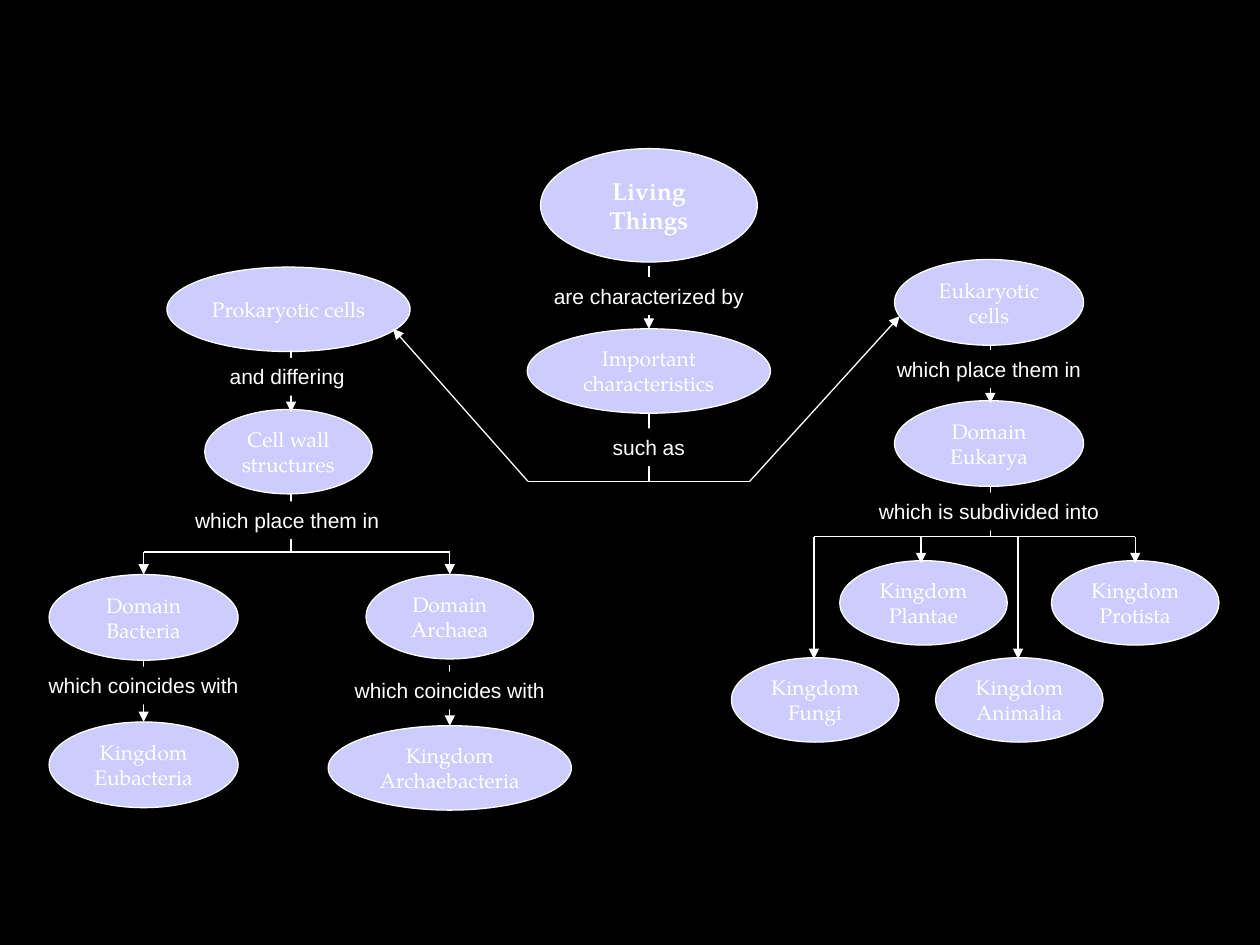
from dataclasses import dataclass

import lxml.etree
import pptx
import pptx.dml.color
import pptx.enum.shapes
import pptx.enum.text
import pptx.oxml.ns
import pptx.util
from pptx.util import Inches


@dataclass(frozen=True)
class Theme:
    background: str = "000000"
    bubble: str = "CCCCFF"
    ink: str = "FFFFFF"
    bubble_font: str = "TeX Gyre Pagella"
    label_font: str = "Arial"
    text_size: float = 12
    root_size: float = 14
    line_width: float = 0.75


@dataclass(frozen=True)
class Bubble:
    text: str
    center: float
    top: float
    size: tuple[float, float]
    is_root: bool = False


@dataclass(frozen=True)
class Label:
    text: str
    center: float
    top: float
    width: float


@dataclass(frozen=True)
class Link:
    start: tuple[float, float]
    end: tuple[float, float]
    arrow: bool = True
    target: str = ""  # text of the bubble whose top the link joins


THEME = Theme()
LABEL_HEIGHT = 0.3
SMALL, MEDIUM, WIDE, ROOT = (1.33, 0.67), (1.5, 0.68), (1.93, 0.67), (1.72, 0.9)

# Columns and horizontal bars of the concept map
BACTERIA_X, ARCHAEA_X, PROKARYOTE_X = 1.14, 3.57, 2.31
ROOT_X, EUKARYOTE_X = 5.15, 7.86
FUNGI_X, PLANTAE_X, ANIMALIA_X, PROTISTA_X = 6.46, 7.31, 8.08, 9.01
CELL_BAR_Y, DOMAIN_BAR_Y, KINGDOM_BAR_Y = 3.82, 4.38, 4.26
CELL_BAR_LEFT, CELL_BAR_RIGHT = 4.19, 5.95

BUBBLES = [
    Bubble("Living Things", ROOT_X, 1.18, ROOT, is_root=True),
    Bubble("Important characteristics", ROOT_X, 2.61, WIDE),
    Bubble("Prokaryotic cells", 2.29, 2.12, WIDE),
    Bubble("Cell wall structures", 2.29, 3.25, SMALL),
    Bubble("Domain Bacteria", BACTERIA_X, 4.56, MEDIUM),
    Bubble("Kingdom Eubacteria", BACTERIA_X, 5.73, MEDIUM),
    Bubble("Domain Archaea", ARCHAEA_X, 4.56, SMALL),
    Bubble("Kingdom Archaebacteria", ARCHAEA_X, 5.76, WIDE),
    Bubble("Eukaryotic cells", 7.85, 2.06, MEDIUM),
    Bubble("Domain Eukarya", 7.85, 3.18, MEDIUM),
    Bubble("Kingdom Plantae", 7.33, 4.45, SMALL),
    Bubble("Kingdom Protista", 9.01, 4.45, SMALL),
    Bubble("Kingdom Fungi", 6.47, 5.22, SMALL),
    Bubble("Kingdom Animalia", 8.09, 5.22, SMALL),
]

# Stems run behind the labels that interrupt them
STEMS = [
    Link((ROOT_X, 2.11), (ROOT_X, 2.61), target="Important characteristics"),
    Link((ROOT_X, 3.28), (ROOT_X, CELL_BAR_Y), arrow=False),
    Link((PROKARYOTE_X, 2.78), (PROKARYOTE_X, 3.27)),
    Link((PROKARYOTE_X, 3.92), (PROKARYOTE_X, DOMAIN_BAR_Y), arrow=False),
    Link((BACTERIA_X, 5.24), (BACTERIA_X, 5.73), target="Kingdom Eubacteria"),
    Link((ARCHAEA_X, 5.28), (ARCHAEA_X, 5.76), target="Kingdom Archaebacteria"),
    Link((EUKARYOTE_X, 2.74), (EUKARYOTE_X, 3.2)),
    Link((EUKARYOTE_X, 3.86), (EUKARYOTE_X, KINGDOM_BAR_Y), arrow=False),
]

LABELS = [
    Label("are characterized by", ROOT_X, 2.2, 2.73),
    Label("such as", ROOT_X, 3.4, 1),
    Label("and differing", 2.28, 2.84, 1.5),
    Label("which place them in", 2.28, 3.98, 2.44),
    Label("which coincides with", BACTERIA_X, 5.29, 1.82),
    Label("which coincides with", ARCHAEA_X, 5.33, 2.44),
    Label("which place them in", 7.85, 2.78, 2.44),
    Label("which is subdivided into", 7.85, 3.91, 2.44),
]

BRANCHES = [
    Link((CELL_BAR_LEFT, CELL_BAR_Y), (CELL_BAR_RIGHT, CELL_BAR_Y), arrow=False),
    Link((CELL_BAR_LEFT, CELL_BAR_Y), (3.12, 2.61)),
    Link((CELL_BAR_RIGHT, CELL_BAR_Y), (7.14, 2.51)),
    Link((BACTERIA_X, DOMAIN_BAR_Y), (ARCHAEA_X, DOMAIN_BAR_Y), arrow=False),
    Link((BACTERIA_X, DOMAIN_BAR_Y), (BACTERIA_X, 4.56), target="Domain Bacteria"),
    Link((ARCHAEA_X, DOMAIN_BAR_Y), (ARCHAEA_X, 4.56), target="Domain Archaea"),
    Link((FUNGI_X, KINGDOM_BAR_Y), (PROTISTA_X, KINGDOM_BAR_Y), arrow=False),
    Link((FUNGI_X, KINGDOM_BAR_Y), (FUNGI_X, 5.23)),
    Link((PLANTAE_X, KINGDOM_BAR_Y), (PLANTAE_X, 4.47)),
    Link((ANIMALIA_X, KINGDOM_BAR_Y), (ANIMALIA_X, 5.23)),
    Link((PROTISTA_X, KINGDOM_BAR_Y), (PROTISTA_X, 4.47)),
]


def color(value: str) -> pptx.dml.color.RGBColor:
    return pptx.dml.color.RGBColor.from_string(value)


def paint(fill, value: str) -> None:
    fill.solid()
    fill.fore_color.rgb = color(value)


def write(text_frame, text: str, font_name: str, size: float, bold: bool = False) -> None:
    text_frame.word_wrap = True
    paragraph = text_frame.paragraphs[0]
    paragraph.alignment = pptx.enum.text.PP_ALIGN.CENTER
    run = paragraph.add_run()
    run.text = text
    run.font.name = font_name
    run.font.size = pptx.util.Pt(size)
    run.font.bold = bold
    run.font.color.rgb = color(THEME.ink)


def draw_bubble(slide, bubble: Bubble):
    width, height = bubble.size
    shape = slide.shapes.add_shape(
        pptx.enum.shapes.MSO_SHAPE.OVAL,
        Inches(bubble.center - width / 2), Inches(bubble.top), Inches(width), Inches(height),
    )
    shape.shadow.inherit = False
    paint(shape.fill, THEME.bubble)
    shape.line.color.rgb = color(THEME.ink)
    shape.line.width = pptx.util.Pt(THEME.line_width)
    frame = shape.text_frame
    frame.margin_left = frame.margin_right = frame.margin_top = frame.margin_bottom = 0
    frame.vertical_anchor = pptx.enum.text.MSO_ANCHOR.MIDDLE
    size = THEME.root_size if bubble.is_root else THEME.text_size
    write(frame, bubble.text, THEME.bubble_font, size, bubble.is_root)
    return shape


def draw_label(slide, label: Label) -> None:
    shape = slide.shapes.add_textbox(
        Inches(label.center - label.width / 2), Inches(label.top),
        Inches(label.width), Inches(LABEL_HEIGHT),
    )
    paint(shape.fill, THEME.background)
    write(shape.text_frame, label.text, THEME.label_font, THEME.text_size)


def draw_link(slide, link: Link, bubble_shapes: dict) -> None:
    connector = slide.shapes.add_connector(
        pptx.enum.shapes.MSO_CONNECTOR.STRAIGHT,
        *(Inches(value) for value in link.start + link.end),
    )
    if link.target:
        connector.end_connect(bubble_shapes[link.target], 0)
    connector.line.color.rgb = color(THEME.ink)
    connector.line.width = pptx.util.Pt(THEME.line_width)
    qualified = pptx.oxml.ns.qn
    properties = connector.element.find(qualified("p:spPr"))
    if link.arrow:
        line = properties.find(qualified("a:ln"))
        lxml.etree.SubElement(line, qualified("a:tailEnd"), type="triangle")
    lxml.etree.SubElement(properties, qualified("a:effectLst"))


def main() -> None:
    presentation = pptx.Presentation()
    presentation.slide_width, presentation.slide_height = Inches(10), Inches(7.5)
    slide = presentation.slides.add_slide(presentation.slide_layouts[6])
    paint(slide.background.fill, THEME.background)
    bubble_shapes = {bubble.text: draw_bubble(slide, bubble) for bubble in BUBBLES}
    for stem in STEMS:
        draw_link(slide, stem, bubble_shapes)
    for label in LABELS:
        draw_label(slide, label)
    for branch in BRANCHES:
        draw_link(slide, branch, bubble_shapes)
    presentation.save("out.pptx")


if __name__ == "__main__":
    main()
